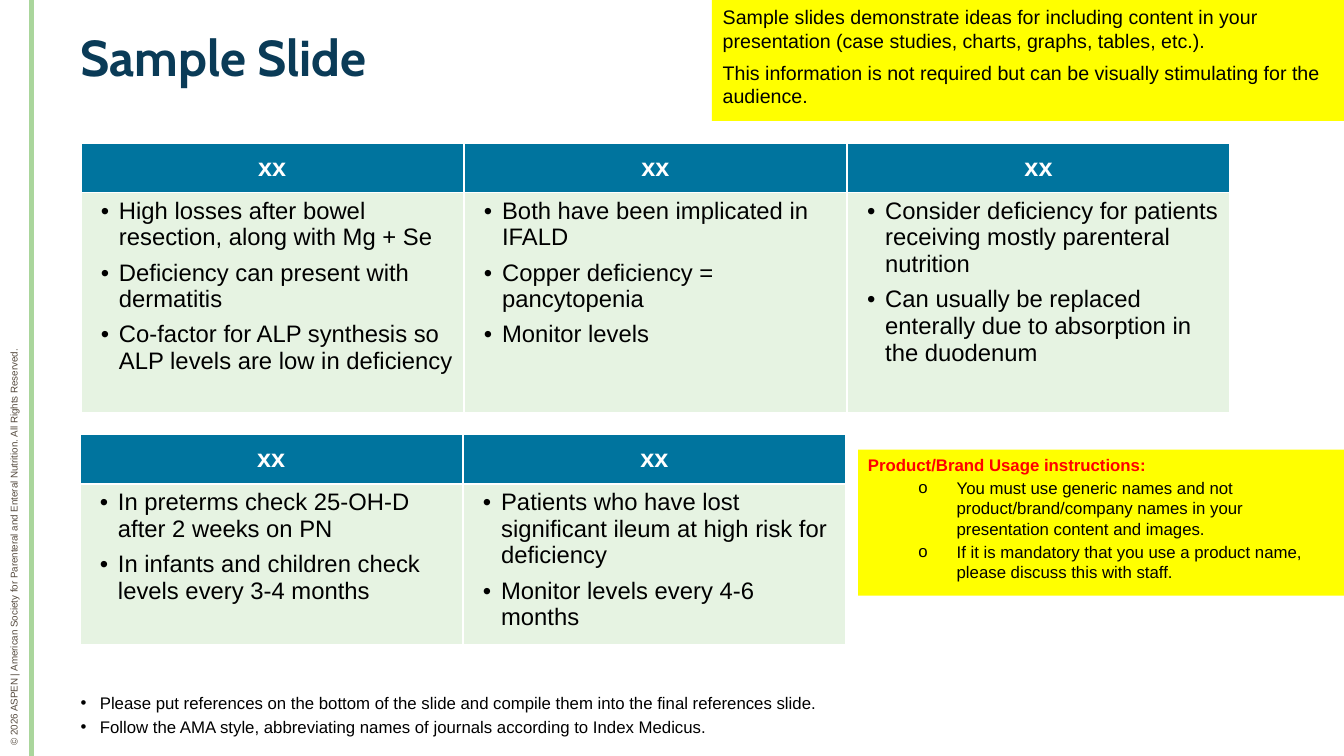
from lxml import etree
from pptx import Presentation
from pptx.dml.color import RGBColor
from pptx.enum.shapes import MSO_CONNECTOR, MSO_SHAPE
from pptx.enum.text import MSO_ANCHOR, PP_ALIGN
from pptx.oxml.ns import qn
from pptx.util import Inches, Pt

TOP, MIDDLE, BOTTOM = MSO_ANCHOR.TOP, MSO_ANCHOR.MIDDLE, MSO_ANCHOR.BOTTOM
LEFT, CENTER = PP_ALIGN.LEFT, PP_ALIGN.CENTER
RECT = MSO_SHAPE.RECTANGLE
STRAIGHT = MSO_CONNECTOR.STRAIGHT

BLACK, WHITE, RED, YELLOW = "000000", "FFFFFF", "FF0000", "FFFF00"
NAVY, BLUE, MINT, GREEN, BROWN = "0A3B57", "00749E", "E6F3E2", "AAD69C", "54493D"
COL = 3.8
HEAD = 0.49

UPPER = [
    ["High losses after bowel resection, along with Mg + Se",
     "Deficiency can present with dermatitis",
     "Co-factor for ALP synthesis so ALP levels are low in deficiency"],
    ["Both have been implicated in IFALD",
     "Copper deficiency = pancytopenia",
     "Monitor levels"],
    ["Consider deficiency for patients receiving mostly parenteral nutrition",
     "Can usually be replaced enterally due to absorption in the duodenum"],
]
LOWER = [
    ["In preterms check 25-OH-D \nafter 2 weeks on PN",
     "In infants and children check levels every 3-4 months"],
    ["Patients who have lost significant ileum at high risk for deficiency",
     "Monitor levels every 4-6 months"],
]
SAMPLE = [
    "Sample slides demonstrate ideas for including content in your presentation "
    "(case studies, charts, graphs, tables, etc.).",
    "This information is not required but can be visually stimulating for the audience.",
]
USAGE = [
    "You must use generic names and not product/brand/company names in your "
    "presentation content and images.",
    "If it is mandatory that you use a product name, please discuss this with staff.",
]
NOTES = [
    "Please put references on the bottom of the slide and compile them into the "
    "final references slide.",
    "Follow the AMA style, abbreviating names of journals according to Index Medicus.",
]
RIGHTS = ("© 2026 ASPEN | American Society for Parenteral and Enteral Nutrition. "
          "All Rights Reserved.")


def color(code):
    return RGBColor.from_string(code)


def paint(item, code):
    item.fill.solid()
    item.fill.fore_color.rgb = color(code)


def write(frame, text, size=12, tint=BLACK, bold=False, font="Arial", align=LEFT,
          before=0, after=0, bullet=None, indent=0, hang=0, lines=None):
    first = frame.paragraphs[0]
    para = frame.add_paragraph() if first.runs else first
    para.text = text
    para.alignment = align
    para.space_before, para.space_after = Pt(before), Pt(after)
    if lines:
        para.line_spacing = lines
    props = para._p.get_or_add_pPr()
    props.set("marL", str(Inches(indent)))
    props.set("indent", str(Inches(-hang)))
    if bullet:
        etree.SubElement(props, qn("a:buFont")).set("typeface", "Arial")
        etree.SubElement(props, qn("a:buChar")).set("char", bullet)
    for run in para.runs:
        run.font.name = font
        run.font.size = Pt(size)
        run.font.bold = bold
        run.font.color.rgb = color(tint)


def setup(frame, anchor, inset):
    frame.word_wrap = True
    frame.vertical_anchor = anchor
    frame.margin_left = frame.margin_right = Inches(inset)
    frame.margin_top = frame.margin_bottom = Inches(inset / 2)
    return frame


def label(slide, area, anchor=TOP, inset=0, turn=0):
    box = slide.shapes.add_textbox(*map(Inches, area))
    box.rotation = turn
    return setup(box.text_frame, anchor, inset)


def panel(slide, area):
    box = slide.shapes.add_shape(RECT, *map(Inches, area))
    box.shadow.inherit = False
    paint(box, YELLOW)
    box.line.fill.background()
    return setup(box.text_frame, TOP, 0.1)


def rule(slide, left, bottom):
    line = slide.shapes.add_connector(
        STRAIGHT, Inches(left), 0, Inches(left), Inches(bottom))
    line.line.color.rgb = color(GREEN)
    line.line.width = Pt(3.75)
    etree.SubElement(line._element.spPr, qn("a:effectLst"))


def border(cell):
    props = cell._tc.get_or_add_tcPr()
    for spot, side in enumerate(("lnL", "lnR", "lnT", "lnB")):
        edge = etree.Element(qn(f"a:{side}"), w=str(Pt(1.5)))
        fill = etree.SubElement(edge, qn("a:solidFill"))
        etree.SubElement(fill, qn("a:srgbClr")).set("val", WHITE)
        props.insert(spot, edge)


def grid(slide, left, top, body, lists):
    count = len(lists)
    table = slide.shapes.add_table(
        2, count, Inches(left), Inches(top),
        Inches(COL * count), Inches(HEAD + body)).table
    table.horz_banding = False
    table.rows[0].height, table.rows[1].height = Inches(HEAD), Inches(body)
    for spot, points in enumerate(lists):
        table.columns[spot].width = Inches(COL)
        head, cell = table.cell(0, spot), table.cell(1, spot)
        for item, shade in ((head, BLUE), (cell, MINT)):
            paint(item, shade)
            border(item)
        head.vertical_anchor = MIDDLE
        write(head.text_frame, "xx", size=18, tint=WHITE, bold=True, align=CENTER)
        cell.margin_left = Inches(0.2)
        for point in points:
            write(cell.text_frame, point, size=17, after=6, bullet="•",
                  indent=0.18, hang=0.18)


def main():
    deck = Presentation()
    deck.slide_width, deck.slide_height = Inches(13.33), Inches(7.5)
    slide = deck.slides.add_slide(deck.slide_layouts[6])

    rights = label(slide, (-3.09, 4.12, 6.45, 0.3), MIDDLE, 0.1, 270)
    write(rights, RIGHTS, size=7, tint=BROWN)
    rule(slide, 0.31, 7.5)
    title = label(slide, (0.8, 0.3, 12.14, 1.45))
    write(title, "Sample Slide", size=36, tint=NAVY, bold=True, font="Cabin", lines=0.95)

    grid(slide, 0.8, 1.42, 2.19, UPPER)
    grid(slide, 0.79, 4.31, 1.58, LOWER)

    notes = label(slide, (0.8, 6.74, 7.61, 0.57), BOTTOM)
    for text in NOTES:
        write(notes, text, after=3, bullet="•", indent=0.19, hang=0.19)

    sample = panel(slide, (7.06, 0, 6.27, 1.2))
    for text in SAMPLE:
        write(sample, text, size=14, after=6, indent=0.01)

    usage = panel(slide, (8.51, 4.46, 4.82, 1.45))
    write(usage, "Product/Brand Usage instructions:", tint=RED, bold=True)
    for text in USAGE:
        write(usage, text, before=2.4, bullet="o", indent=0.88, hang=0.38)

    deck.save("out.pptx")


if __name__ == "__main__":
    main()
